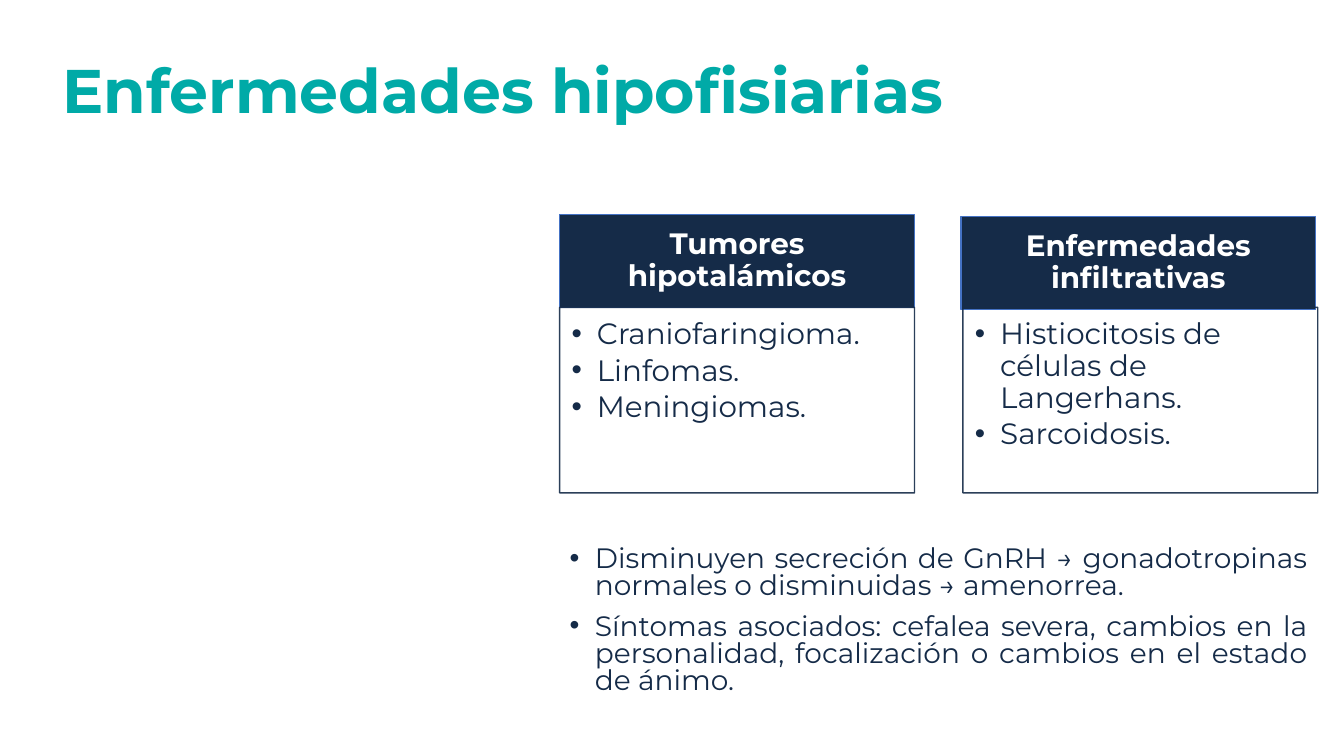
import pptx
import pptx.util
import pptx.dml.color
import pptx.enum.shapes
import pptx.enum.text
import pptx.oxml.ns
from dataclasses import dataclass
from lxml import etree

Inches = pptx.util.Inches
Align = pptx.enum.text.PP_ALIGN
Anchor = pptx.enum.text.MSO_ANCHOR


@dataclass(frozen=True)
class Theme:
    font: str = "Montserrat"
    teal: str = "00AAA7"
    navy: str = "152B48"
    blue: str = "4472C4"
    white: str = "FFFFFF"
    title: int = 44
    card: int = 21
    notes: int = 20


THEME = Theme()

CARDS = [
    ("Tumores hipotalámicos",
     ["Craniofaringioma.", "Linfomas.", "Meningiomas."],
     (5.55, 2.13), (5.55, 3.05)),
    ("Enfermedades infiltrativas",
     ["Histiocitosis de células de Langerhans.", "Sarcoidosis."],
     (9.53, 2.15), (9.55, 3.05)),
]
NOTES = [
    "Disminuyen secreción de GnRH → gonadotropinas normales o disminuidas → amenorrea.",
    "Síntomas asociados: cefalea severa, cambios en la personalidad, focalización o "
    "cambios en el estado de ánimo.",
]


def rgb(code):
    return pptx.dml.color.RGBColor.from_string(code)


def place(shape, box):
    shape.left, shape.top, shape.width, shape.height = map(Inches, box)


def bullet(para):
    props = para._p.get_or_add_pPr()
    props.set("marL", str(Inches(0.25)))
    props.set("indent", str(-Inches(0.25)))
    for tag, name, value in (("a:buFont", "typeface", "Arial"), ("a:buChar", "char", "•")):
        etree.SubElement(props, pptx.oxml.ns.qn(tag)).set(name, value)


def write(frame, lines, size, color, align, bold=False, space=0.9,
          before=0, after=0, dots=False):
    frame.word_wrap = True
    frame.auto_size = pptx.enum.text.MSO_AUTO_SIZE.NONE
    frame.text = "\n".join(lines)
    for i, para in enumerate(frame.paragraphs):
        if dots:
            bullet(para)
        para.alignment = align
        para.line_spacing = space
        para.space_before = pptx.util.Pt(before if i else 0)
        para.space_after = pptx.util.Pt(after)
        for run in para.runs:
            font = run.font
            font.name, font.size, font.bold = THEME.font, pptx.util.Pt(size), bold
            font.color.rgb = rgb(color)


def panel(slide, box, line, insets, anchor):
    shape = slide.shapes.add_shape(
        pptx.enum.shapes.MSO_SHAPE.RECTANGLE, *map(Inches, box))
    shape.shadow.inherit = False
    shape.fill.background()
    shape.line.color.rgb = rgb(line)
    shape.line.width = pptx.util.Pt(1)
    frame = shape.text_frame
    frame.margin_left, frame.margin_top, frame.margin_right, frame.margin_bottom = map(
        Inches, insets)
    frame.vertical_anchor = anchor
    return shape


# Heading
def add_title(slide, box):
    title = slide.shapes.title
    place(title, box)
    title.text_frame.vertical_anchor = Anchor.MIDDLE
    write(title.text_frame, ["Enfermedades hipofisiarias"], THEME.title, THEME.teal,
          Align.LEFT, bold=True)


# Disease card: dark header above an outlined list
def add_card(slide, name, items, head, base):
    top = panel(slide, (*head, 3.52, 0.92), THEME.blue,
                (0.16, 0.09, 0.16, 0.09), Anchor.MIDDLE)
    top.fill.solid()
    top.fill.fore_color.rgb = rgb(THEME.navy)
    write(top.text_frame, [name], THEME.card, THEME.white, Align.CENTER, bold=True)

    body = panel(slide, (*base, 3.52, 1.84), THEME.navy,
                 (0.12, 0.12, 0.16, 0.18), Anchor.TOP)
    tone = body.line._ln.find(".//" + pptx.oxml.ns.qn("a:srgbClr"))
    etree.SubElement(tone, pptx.oxml.ns.qn("a:alpha")).set("val", "90000")
    write(body.text_frame, items, THEME.card, THEME.navy, Align.LEFT,
          after=0.15 * THEME.card, dots=True)


# Clinical notes
def add_notes(slide, box):
    body = slide.placeholders[1]
    place(body, box)
    body.text_frame.vertical_anchor = Anchor.TOP
    write(body.text_frame, NOTES, THEME.notes, THEME.navy, Align.JUSTIFY,
          space=0.8, before=10, dots=True)


def main():
    deck = pptx.Presentation()
    deck.slide_width, deck.slide_height = Inches(13.33), Inches(7.5)
    slide = deck.slides.add_slide(deck.slide_layouts[1])
    add_title(slide, (0.52, 0.2, 11.5, 1.45))
    add_notes(slide, (5.55, 5.38, 7.52, 1.73))
    for card in CARDS:
        add_card(slide, *card)
    deck.save("out.pptx")


if __name__ == "__main__":
    main()
